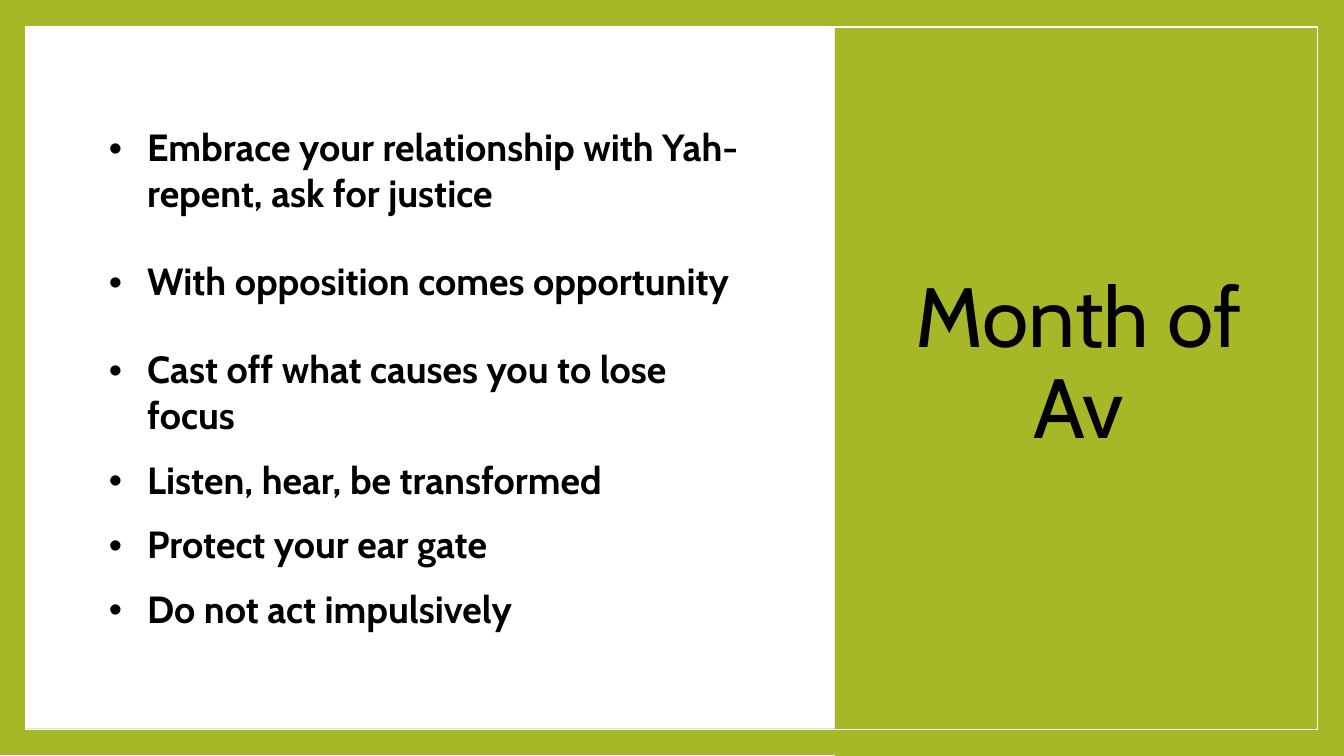
import pptx
import pptx.dml.color
import pptx.enum.shapes
import pptx.enum.text
import pptx.oxml
import pptx.oxml.ns
import pptx.util
from dataclasses import dataclass

Inches = pptx.util.Inches
Pt = pptx.util.Pt


@dataclass(frozen=True)
class Theme:
    font: str = "Cabin"
    green: str = "A6B727"
    white: str = "FFFFFF"
    black: str = "000000"
    title_size: int = 60
    bullet_size: int = 27


class SlideBuilder:
    def __init__(self, slide, theme):
        self.slide = slide
        self.theme = theme

    def color(self, value):
        return pptx.dml.color.RGBColor.from_string(value)

    def rectangle(self, left, top, width, height, fill=None, line=None):
        shape = self.slide.shapes.add_shape(
            pptx.enum.shapes.MSO_SHAPE.RECTANGLE,
            Inches(left), Inches(top), Inches(width), Inches(height))
        shape.shadow.inherit = False
        if fill:
            shape.fill.solid()
            shape.fill.fore_color.rgb = self.color(fill)
        else:
            shape.fill.background()
        if line:
            shape.line.color.rgb = self.color(line)
            shape.line.width = Pt(1)
        else:
            shape.line.fill.background()

    def run(self, paragraph, text, size, bold=False):
        run = paragraph.add_run()
        run.text = text
        run.font.name = self.theme.font
        run.font.size = Pt(size)
        run.font.bold = bold
        run.font.color.rgb = self.color(self.theme.black)

    def title(self, text, left, top, width, height):
        box = self.slide.shapes.add_textbox(
            Inches(left), Inches(top), Inches(width), Inches(height))
        frame = box.text_frame
        frame.word_wrap = True
        frame.vertical_anchor = pptx.enum.text.MSO_ANCHOR.MIDDLE
        paragraph = frame.paragraphs[0]
        paragraph.alignment = pptx.enum.text.PP_ALIGN.CENTER
        paragraph.line_spacing = 0.9
        self.run(paragraph, text, self.theme.title_size)

    def bullet(self, paragraph, indent):
        properties = paragraph._p.get_or_add_pPr()
        properties.set("marL", str(Inches(indent)))
        properties.set("indent", str(-Inches(indent)))
        namespace = pptx.oxml.ns.nsdecls("a")
        properties.append(pptx.oxml.parse_xml(f'<a:buFont {namespace} typeface="Arial"/>'))
        properties.append(pptx.oxml.parse_xml(f'<a:buChar {namespace} char="•"/>'))

    def bullet_table(self, rows, left, top, width):
        total_height = sum(height for _, height in rows)
        table = self.slide.shapes.add_table(
            len(rows), 1, Inches(left), Inches(top),
            Inches(width), Inches(total_height)).table
        table.first_row = False
        table.horz_banding = False
        for index, (text, height) in enumerate(rows):
            table.rows[index].height = Inches(height)
            cell = table.cell(index, 0)
            cell.fill.background()
            cell.vertical_anchor = pptx.enum.text.MSO_ANCHOR.MIDDLE
            cell.margin_left = cell.margin_right = Inches(0.14)
            cell.margin_top = cell.margin_bottom = Inches(0.07)
            paragraph = cell.text_frame.paragraphs[0]
            self.bullet(paragraph, 0.38)
            self.run(paragraph, text, self.theme.bullet_size, bold=True)


def main():
    presentation = pptx.Presentation()
    presentation.slide_width = Inches(13.33)
    presentation.slide_height = Inches(7.5)
    theme = Theme()
    slide = presentation.slides.add_slide(presentation.slide_layouts[6])
    builder = SlideBuilder(slide, theme)

    # Green frame, white panel and green title panel
    builder.rectangle(0, -0.01, 13.33, 7.5, fill=theme.green)
    builder.rectangle(0.25, 0.26, 12.82, 6.97, fill=theme.white)
    builder.rectangle(8.28, 0, 5.05, 7.5, fill=theme.green)

    # Title and thin white outline
    builder.title("Month of Av", 8.74, 0.67, 3.91, 5.91)
    builder.rectangle(0.25, 0.27, 12.82, 6.97, line=theme.white)

    # Bulleted advice, one row each
    tall, short = 1.1, 0.64
    builder.bullet_table([
        ("Embrace your relationship with Yah- repent, ask for justice", tall),
        ("With opposition comes opportunity", tall),
        ("Cast off what causes you to lose focus", tall),
        ("Listen, hear, be transformed", short),
        ("Protect your ear gate", short),
        ("Do not act impulsively", short),
    ], 0.94, 1.15, 6.62)

    presentation.save("out.pptx")


if __name__ == "__main__":
    main()
